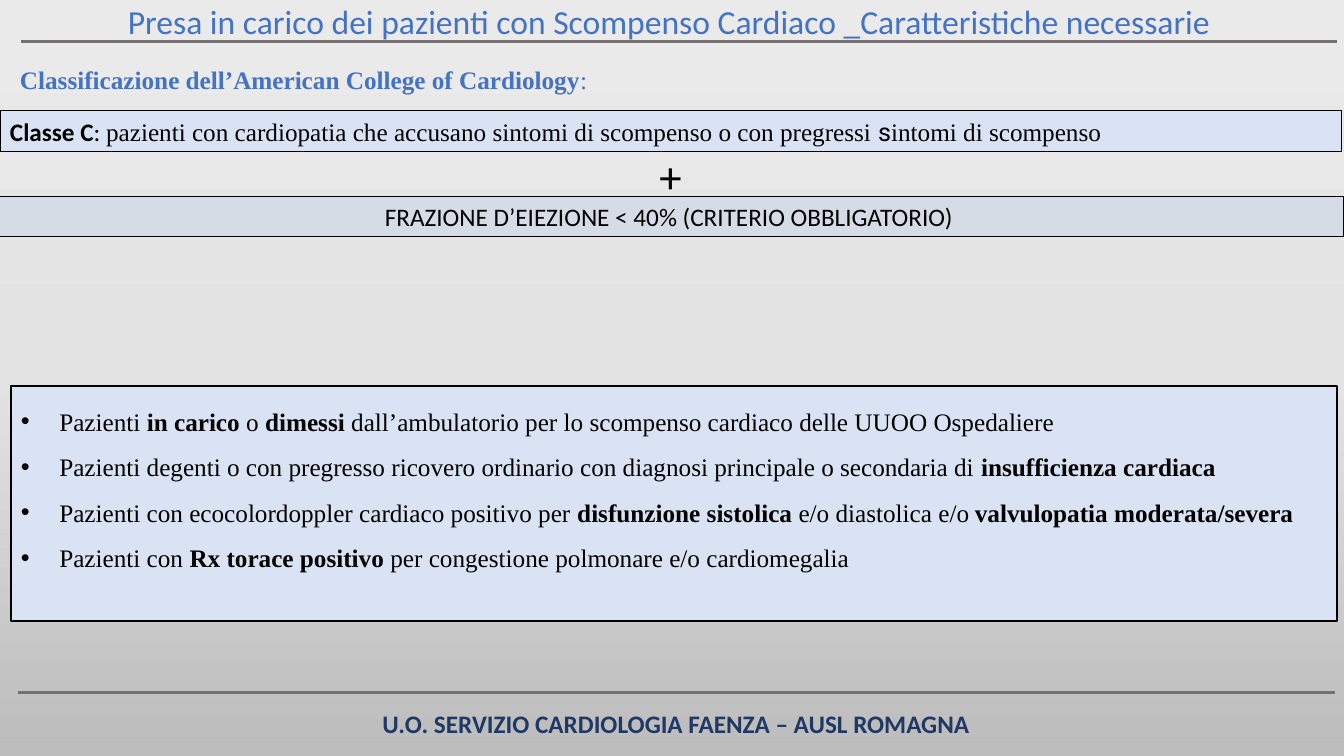
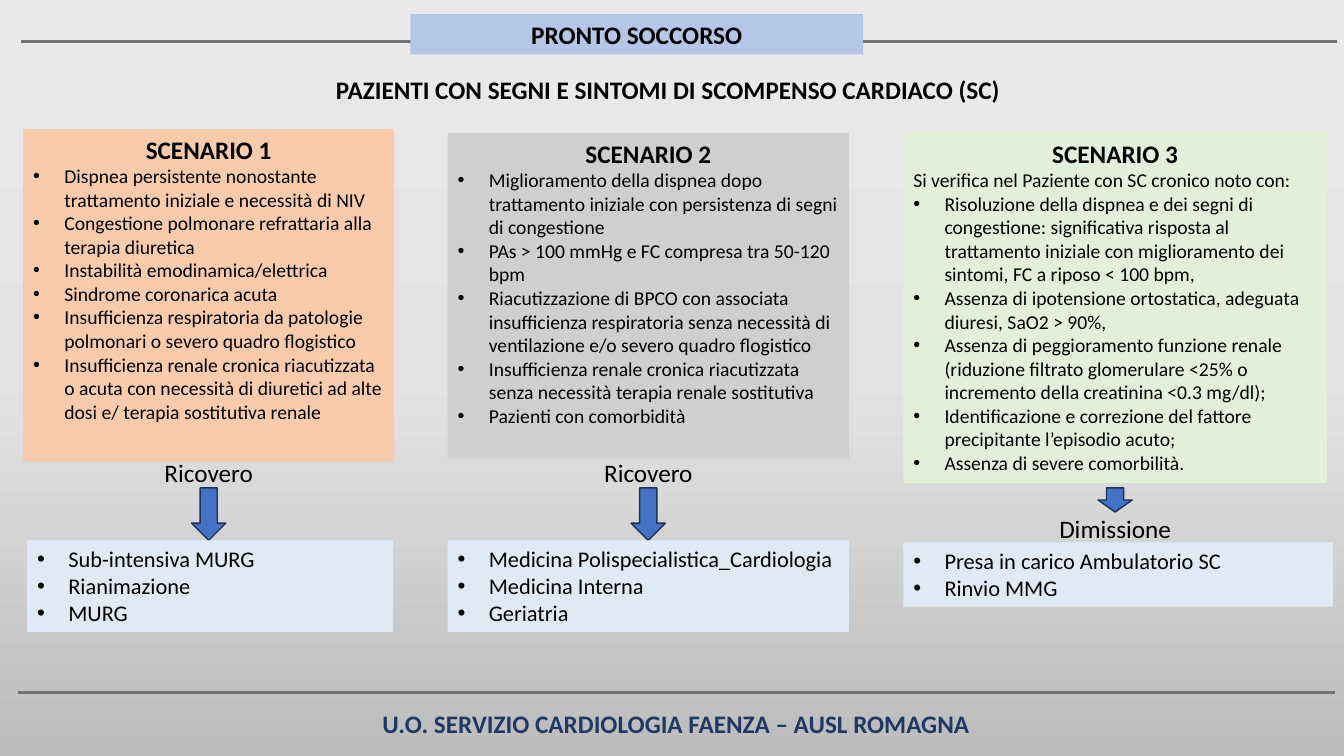
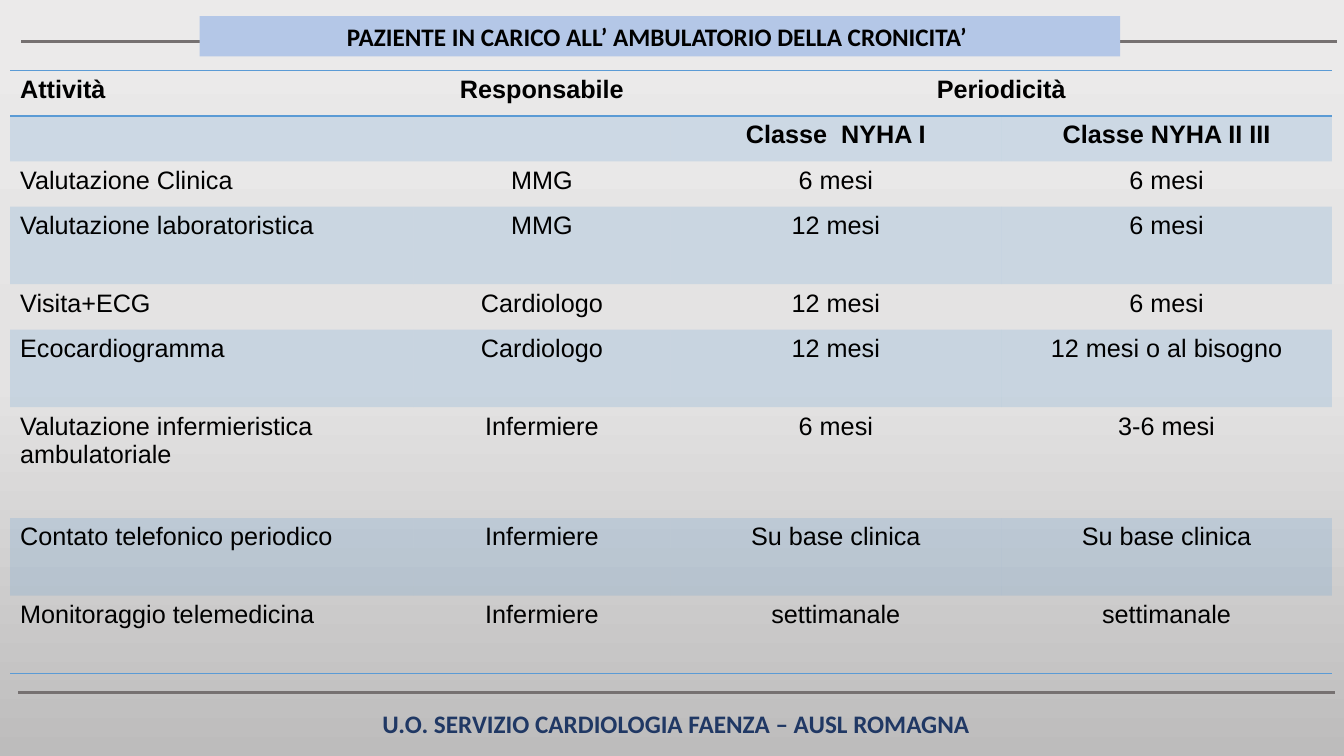
from copy import deepcopy

from lxml import etree
from pptx import Presentation
from pptx.dml.color import RGBColor
from pptx.enum import shapes, text
from pptx.oxml.ns import qn
from pptx.util import Inches, Pt

BLACK = RGBColor(0x00, 0x00, 0x00)
RULE_GREY = RGBColor(0x76, 0x71, 0x71)
NAVY = RGBColor(0x20, 0x38, 0x64)
BLUE = RGBColor(0x44, 0x72, 0xC4)
ARROW_EDGE = RGBColor(0x1E, 0x32, 0x56)
BANNER_BLUE = RGBColor(0xB4, 0xC7, 0xE7)
PALE_BLUE = RGBColor(0xDA, 0xE3, 0xF3)
ICE_BLUE = RGBColor(0xDE, 0xEB, 0xF7)
SLATE = RGBColor(0xD6, 0xDC, 0xE5)
PEACH = RGBColor(0xF8, 0xCB, 0xAD)
STONE = RGBColor(0xD0, 0xCE, 0xCE)
MINT = RGBColor(0xE2, 0xF0, 0xD9)
TABLE_BLUE = RGBColor(0x5B, 0x9B, 0xD5)
BACKGROUND = [(0, RGBColor(0xEB, 0xEA, 0xEA)), (0.5, RGBColor(0xE4, 0xE3, 0xE3)),
              (1, RGBColor(0xBD, 0xBC, 0xBC))]

SANS, SERIF, ROBOTO, TABLE_FONT = "Calibri", "Times New Roman", "Roboto", "Arial"
LEFT, CENTER = text.PP_ALIGN.LEFT, text.PP_ALIGN.CENTER
BOLD = {"bold": True}

FOOTER = "U.O. SERVIZIO CARDIOLOGIA FAENZA – AUSL ROMAGNA"
RULES = [(0.18, 13.24, 6.87), (0.21, 13.26, 0.41)]

# Paragraphs are lists of runs; a run is plain text or (text, font changes).
CLASS_C = [("Classe C", BOLD), ": ",
           ("pazienti con cardiopatia che accusano sintomi di scompenso o con pregressi",
            {"font": SERIF}),
           (" s", {"font": ROBOTO}), ("intomi di scompenso", {"font": SERIF})]
CRITERIA = [
    ["Pazienti ", ("in carico ", BOLD), "o ", ("dimessi", BOLD),
     " dall’ambulatorio per lo scompenso cardiaco delle UUOO Ospedaliere"],
    ["Pazienti degenti o con pregresso ricovero ordinario con diagnosi principale o secondaria di ",
     ("insufficienza cardiaca", BOLD)],
    ["Pazienti con ecocolordoppler cardiaco positivo per ", ("disfunzione sistolica ", BOLD),
     "e/o diastolica e/o", (" ", {"font": ROBOTO, "size": 16}),
     ("valvulopatia moderata/severa", BOLD)],
    ["Pazienti con ", ("Rx torace positivo ", BOLD),
     "per congestione polmonare e/o cardiomegalia"],
]

SCENARIOS = [
    {"title": "SCENARIO 1", "box": (0.23, 1.28, 3.68, 3.3), "fill": PEACH, "intro": None,
     "signs": [
         "Dispnea persistente nonostante trattamento iniziale e necessità di NIV",
         "Congestione polmonare refrattaria alla terapia diuretica",
         "Instabilità emodinamica/elettrica",
         "Sindrome coronarica acuta",
         "Insufficienza respiratoria da patologie polmonari o severo quadro flogistico",
         "Insufficienza renale cronica riacutizzata o acuta con necessità di diuretici ad alte "
         "dosi e/ terapia sostitutiva renale"],
     "outcome": "Ricovero", "outcome_top": 4.49, "arrow_height": 0.52,
     "wards": ["Sub-intensiva MURG", "Rianimazione", "MURG"],
     "wards_box": (0.27, 5.36, 3.63, 0.91)},
    {"title": "SCENARIO 2", "box": (4.44, 1.32, 3.98, 3.23), "fill": STONE, "intro": None,
     "signs": [
         "Miglioramento della dispnea dopo trattamento iniziale con persistenza di segni di "
         "congestione",
         "PAs > 100 mmHg e FC compresa tra 50-120 bpm",
         "Riacutizzazione di BPCO con associata insufficienza respiratoria senza necessità di "
         "ventilazione e/o severo quadro flogistico",
         "Insufficienza renale cronica riacutizzata senza necessità terapia renale sostitutiva",
         "Pazienti con comorbidità"],
     "outcome": "Ricovero", "outcome_top": 4.49, "arrow_height": 0.52,
     "wards": ["Medicina Polispecialistica_Cardiologia", "Medicina Interna", "Geriatria"],
     "wards_box": (4.44, 5.36, 3.98, 0.91)},
    {"title": "SCENARIO 3", "box": (8.96, 1.32, 4.2, 3.47), "fill": MINT,
     "intro": "Si verifica nel Paziente con SC cronico noto con:",
     "signs": [
         "Risoluzione della dispnea e dei segni di congestione: significativa risposta al "
         "trattamento iniziale con miglioramento dei sintomi, FC a riposo < 100 bpm,",
         "Assenza di ipotensione ortostatica, adeguata diuresi, SaO2 > 90%,",
         "Assenza di peggioramento funzione renale (riduzione filtrato glomerulare <25% o "
         "incremento della creatinina <0.3 mg/dl);",
         "Identificazione e correzione del fattore precipitante l’episodio acuto;",
         "Assenza di severe comorbilità."],
     "outcome": "Dimissione", "outcome_top": 5.04, "arrow_height": 0.24,
     "wards": ["Presa in carico Ambulatorio SC", "Rinvio MMG"],
     "wards_box": (8.96, 5.38, 4.26, 0.64)},
]

ACTIVITIES = [
    ("Attività", "Responsabile", "Periodicità", ""),
    ("", "", "Classe  NYHA I", "Classe NYHA II III"),
    ("Valutazione Clinica", "MMG", "6 mesi", "6 mesi"),
    ("Valutazione laboratoristica", "MMG", "12 mesi", "6 mesi"),
    ("Visita+ECG", "Cardiologo", "12 mesi", "6 mesi"),
    ("Ecocardiogramma", "Cardiologo", "12 mesi", "12 mesi o al bisogno"),
    ("Valutazione infermieristica ambulatoriale", "Infermiere", "6 mesi", "3-6 mesi"),
    ("Contato telefonico periodico", "Infermiere", "Su base clinica", "Su base clinica"),
    ("Monitoraggio telemedicina", "Infermiere", "settimanale", "settimanale"),
]
COLUMN_WIDTHS = [4, 2.55, 3.28, 3.28]
ROW_HEIGHTS = [0.45, 0.45, 0.45, 0.77, 0.45, 0.77, 1.1, 0.77, 0.77]
HEADER_ROWS = 2
PLAIN_TABLE_STYLE = "{2D5ABB26-0587-4C30-8999-92F81FD0307C}"


def write(frame, runs, size=18, font=SANS, color=BLACK, bold=False, align=LEFT,
          bullet=None, spacing=None, after=None):
    """Add one paragraph; bullet is its hanging indent in inches."""
    first = frame.paragraphs[0]
    paragraph = frame.add_paragraph() if first.runs else first
    paragraph.alignment = align
    if spacing:
        paragraph.line_spacing = spacing
    if after:
        paragraph.space_after = Pt(after)
    if bullet:
        properties = paragraph._p.get_or_add_pPr()
        properties.set("marL", str(Inches(bullet)))
        properties.set("indent", str(-Inches(bullet)))
        etree.SubElement(properties, qn("a:buFont")).set("typeface", "Arial")
        etree.SubElement(properties, qn("a:buChar")).set("char", "•")
    for item in [runs] if isinstance(runs, str) else runs:
        words, change = (item, {}) if isinstance(item, str) else item
        run = paragraph.add_run()
        run.text = words
        run.font.size = Pt(change.get("size", size))
        run.font.name = change.get("font", font)
        run.font.bold = change.get("bold", bold)
        run.font.color.rgb = color


def add_label(slide, box, runs, wrap=True, **style):
    frame = slide.shapes.add_textbox(*map(Inches, box)).text_frame
    frame.word_wrap = wrap
    write(frame, runs, **style)


def add_panel(slide, box, fill, edge=None, edge_width=0.75, kind=shapes.MSO_SHAPE.RECTANGLE):
    """Draw a filled shape and return its text frame."""
    panel = slide.shapes.add_shape(kind, *map(Inches, box))
    panel.shadow.inherit = False
    panel.fill.solid()
    panel.fill.fore_color.rgb = fill
    if edge is None:
        panel.line.fill.background()
    else:
        panel.line.color.rgb = edge
        panel.line.width = Pt(edge_width)
    panel.text_frame.word_wrap = True
    panel.text_frame.vertical_anchor = text.MSO_ANCHOR.TOP
    return panel.text_frame


def add_banner(slide, box, title):
    write(add_panel(slide, box, BANNER_BLUE), title, bold=True, align=CENTER)


def set_background(master):
    fill = master.background.fill
    fill.gradient()
    fill.gradient_angle = 270
    stops = master.element.find(".//" + qn("p:bgPr")).find(".//" + qn("a:gsLst"))
    stops.append(deepcopy(stops[0]))
    for stop, (position, color) in zip(fill.gradient_stops, BACKGROUND):
        stop.position = position
        stop.color.rgb = color


def new_slide(prs):
    """Add a blank slide with the shared rules and footer."""
    slide = prs.slides.add_slide(prs.slide_layouts[6])
    for start, end, y in RULES:
        rule = slide.shapes.add_connector(
            shapes.MSO_CONNECTOR.STRAIGHT, Inches(start), Inches(y), Inches(end), Inches(y))
        rule.line.color.rgb = RULE_GREY
        rule.line.width = Pt(2.25)
        etree.SubElement(rule._element.spPr, qn("a:effectLst"))
    add_label(slide, (0.18, 6.98, 13.05, 0.5), FOOTER, color=NAVY, bold=True, align=CENTER)
    return slide


def build_requirements(prs):
    slide = new_slide(prs)
    add_label(slide, (-0.03, -0.04, 13.33, 0.51),
              "Presa in carico dei pazienti con Scompenso Cardiaco _Caratteristiche necessarie",
              size=24, color=BLUE, align=CENTER)
    add_label(slide, (0.1, 0.44, 6.67, 0.51),
              [("Classificazione dell’American College of Cardiology", BOLD), ":"],
              font=SERIF, color=BLUE, spacing=1.5, after=8)
    write(add_panel(slide, (0, 1.95, 13.33, 0.4), SLATE, BLACK),
          "FRAZIONE D’EIEZIONE < 40% (CRITERIO OBBLIGATORIO) ", align=CENTER)
    criteria = add_panel(slide, (0.11, 3.83, 13.15, 2.33), PALE_BLUE, BLACK, 1)
    for runs in CRITERIA:
        write(criteria, runs, font=SERIF, bullet=0.38, spacing=1.5)
    write(add_panel(slide, (0, 1.1, 13.31, 0.4), PALE_BLUE, BLACK), CLASS_C)
    add_label(slide, (6.44, 1.43, 0.41, 0.64), "+", size=32)


def build_scenarios(prs):
    slide = new_slide(prs)
    add_banner(slide, (4.07, 0.14, 4.49, 0.4), "PRONTO SOCCORSO")
    add_label(slide, (2.89, 0.69, 7.47, 0.4),
              "PAZIENTI CON SEGNI E SINTOMI DI SCOMPENSO CARDIACO (SC)",
              bold=True, align=CENTER)
    arrow_width, outcome_width = 0.34, 1.32
    for scenario in SCENARIOS:
        left, _, width, _ = scenario["box"]
        axis = left + width / 2
        signs = add_panel(slide, scenario["box"], scenario["fill"])
        write(signs, scenario["title"], bold=True, align=CENTER)
        if scenario["intro"]:
            write(signs, scenario["intro"], size=14)
        for sign in scenario["signs"]:
            write(signs, sign, size=14, bullet=0.31)
        add_panel(slide, (axis - arrow_width / 2, 4.84, arrow_width, scenario["arrow_height"]),
                  BLUE, ARROW_EDGE, 1, shapes.MSO_SHAPE.DOWN_ARROW)
        add_label(slide, (axis - outcome_width / 2, scenario["outcome_top"], outcome_width, 0.4),
                  scenario["outcome"], wrap=False, align=CENTER)
        wards = add_panel(slide, scenario["wards_box"], ICE_BLUE)
        for ward in scenario["wards"]:
            write(wards, ward, size=16, bullet=0.31)


def add_cell_border(cell, side, position):
    line = etree.Element(qn("a:ln" + side), w=str(Pt(1)))
    color = etree.SubElement(etree.SubElement(line, qn("a:solidFill")), qn("a:srgbClr"))
    color.set("val", str(TABLE_BLUE))
    cell._tc.get_or_add_tcPr().insert(position, line)


def fill_cell(cell, shaded):
    if not shaded:
        cell.fill.background()
        return
    cell.fill.solid()
    cell.fill.fore_color.rgb = TABLE_BLUE
    color = cell._tc.tcPr.find(".//" + qn("a:srgbClr"))
    etree.SubElement(color, qn("a:alpha")).set("val", "20000")


def build_activities(prs):
    slide = new_slide(prs)
    add_banner(slide, (1.98, 0.16, 9.13, 0.4),
               "PAZIENTE IN CARICO ALL’ AMBULATORIO DELLA CRONICITA’ ")
    table = slide.shapes.add_table(
        len(ACTIVITIES), len(COLUMN_WIDTHS), Inches(0.1), Inches(0.7),
        Inches(sum(COLUMN_WIDTHS)), Inches(sum(ROW_HEIGHTS))).table
    table.horz_banding = False
    table._tbl.tblPr.find(qn("a:tableStyleId")).text = PLAIN_TABLE_STYLE
    for column, width in zip(table.columns, COLUMN_WIDTHS):
        column.width = Inches(width)
    for r, (row, height) in enumerate(zip(ACTIVITIES, ROW_HEIGHTS)):
        table.rows[r].height = Inches(height)
        for c, words in enumerate(row):
            cell = table.cell(r, c)
            fill_cell(cell, shaded=r % 2 == 1)
            if r in (0, len(ACTIVITIES) - 1):
                add_cell_border(cell, "B", 0)
            if r == 0:
                add_cell_border(cell, "T", 0)
            if words:
                write(cell.text_frame, words, font=TABLE_FONT, bold=r < HEADER_ROWS,
                      align=CENTER if c else LEFT)
    table.cell(0, 2).merge(table.cell(0, 3))


def main():
    prs = Presentation()
    prs.slide_width, prs.slide_height = Inches(13.33), Inches(7.5)
    set_background(prs.slide_master)
    build_requirements(prs)
    build_scenarios(prs)
    build_activities(prs)
    prs.save("out.pptx")


if __name__ == "__main__":
    main()
